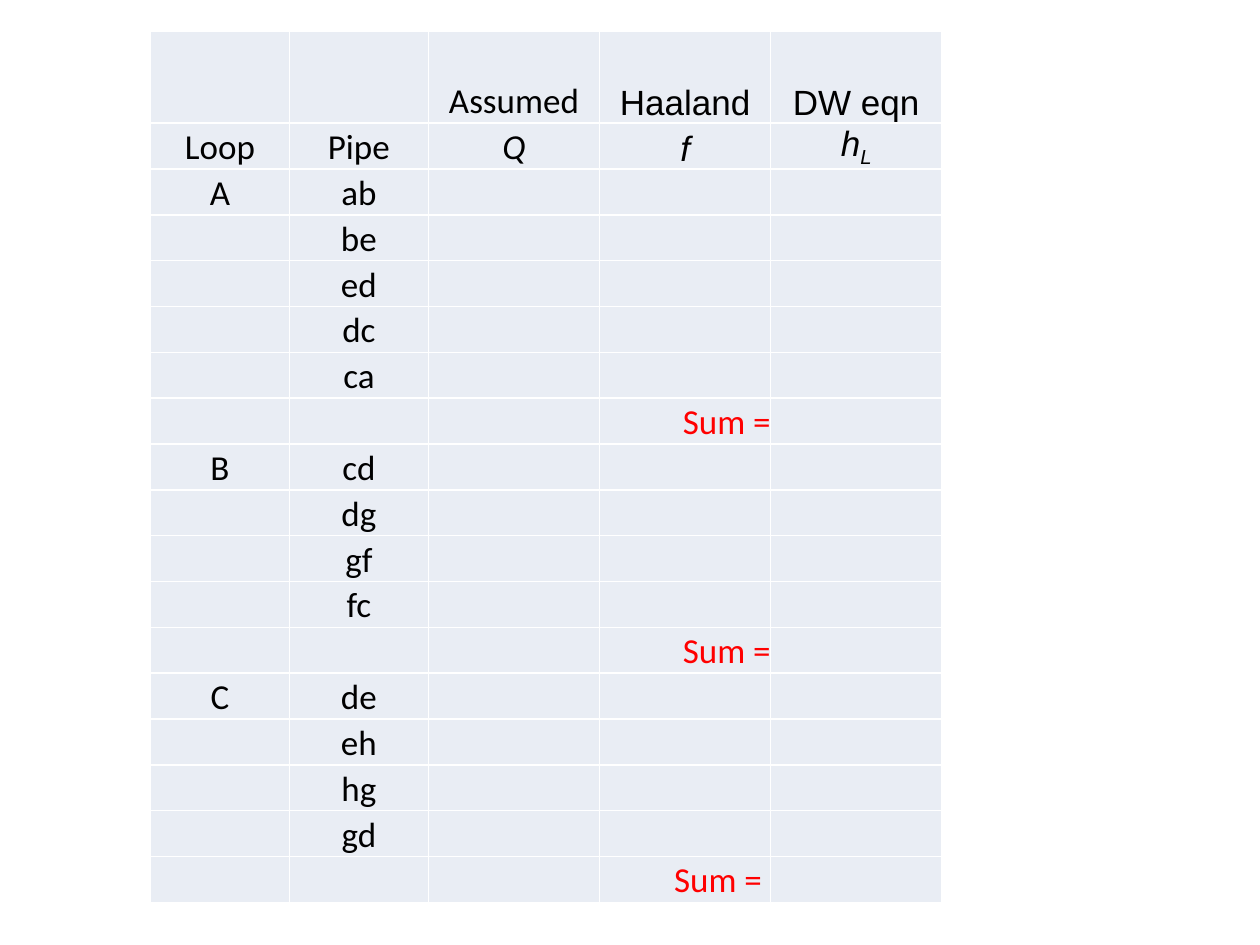
import lxml.etree
import pptx
import pptx.dml.color
import pptx.enum.text
import pptx.oxml.ns
import pptx.util

Pt = pptx.util.Pt
ALIGN = pptx.enum.text.PP_ALIGN
BOTTOM = pptx.enum.text.MSO_ANCHOR.BOTTOM


def color(hex_text):
    return pptx.dml.color.RGBColor.from_string(hex_text)


class Sheet:
    """Style of the slide, and the page being filled."""

    text_font, symbol_font = "Calibri", "Arial"
    size = 20
    ink, sum_ink, cell_fill, rule = "000000", "FF0000", "E9EDF4", "FFFFFF"
    side_margin = 5

    def __init__(self, deck):
        self.page = deck.slides.add_slide(deck.slide_layouts[6])

    def table(self, left, top, widths, heights):
        frame = self.page.shapes.add_table(
            len(heights), len(widths), Pt(left), Pt(top), Pt(sum(widths)), Pt(sum(heights)))
        table = frame.table
        table.first_row = table.horz_banding = False
        for column, width in zip(table.columns, widths):
            column.width = Pt(width)
        for row, height in zip(table.rows, heights):
            row.height = Pt(height)
        for cell in table.iter_cells():
            cell.fill.solid()
            cell.fill.fore_color.rgb = color(self.cell_fill)
            cell.margin_top = cell.margin_bottom = 0
            self.borders(cell)
        return table

    def borders(self, cell):
        properties = cell._tc.get_or_add_tcPr()
        name = pptx.oxml.ns.qn
        for position, side in enumerate(("a:lnL", "a:lnR", "a:lnT", "a:lnB")):
            line = lxml.etree.Element(name(side), w=str(Pt(1)))
            fill = lxml.etree.SubElement(line, name("a:solidFill"))
            lxml.etree.SubElement(fill, name("a:srgbClr"), val=self.rule)
            properties.insert(position, line)

    def text(self, cell, words, font=text_font, ink=ink, italic=False,
             align=ALIGN.CENTER, margin=side_margin, subscript=""):
        cell.vertical_anchor = BOTTOM
        cell.margin_left = cell.margin_right = Pt(margin)
        para = cell.text_frame.paragraphs[0]
        para.alignment = align
        para.font.name, para.font.size = font, Pt(self.size)
        para.font.italic = italic
        para.font.color.rgb = color(ink)
        para.add_run().text = words
        if subscript:
            span = para.add_run()
            span.text = subscript
            span._r.get_or_add_rPr().set("baseline", "-25000")


def main():
    deck = pptx.Presentation()
    deck.slide_width, deck.slide_height = Pt(720), Pt(540)
    sheet = Sheet(deck)

    # Loops, each with its pipes and a closing sum row
    loops = {
        "A": ["ab", "be", "ed", "dc", "ca"],
        "B": ["cd", "dg", "gf", "fc"],
        "C": ["de", "eh", "hg", "gd"],
    }
    body_rows = sum(len(pipes) + 1 for pipes in loops.values())
    table = sheet.table(86, 18, [79.4] * 2 + [97.8] * 3, [52.4] + [26.2] * (body_rows + 1))

    # Two heading rows
    arial = sheet.symbol_font
    sheet.text(table.cell(0, 2), "Assumed")
    sheet.text(table.cell(0, 3), "Haaland", arial)
    sheet.text(table.cell(0, 4), "DW eqn", arial)
    sheet.text(table.cell(1, 0), "Loop")
    sheet.text(table.cell(1, 1), "Pipe")
    sheet.text(table.cell(1, 2), "Q", italic=True)
    sheet.text(table.cell(1, 3), "f", arial, italic=True)
    sheet.text(table.cell(1, 4), "h", arial, italic=True, subscript="L")

    # Body rows; only the last sum keeps its side margin
    row = 2
    for loop, pipes in loops.items():
        sheet.text(table.cell(row, 0), loop)
        for pipe in pipes:
            sheet.text(table.cell(row, 1), pipe)
            row += 1
        margin = sheet.side_margin if loop == "C" else 0
        sheet.text(table.cell(row, 3), "Sum =", ink=sheet.sum_ink,
                   align=ALIGN.RIGHT, margin=margin)
        row += 1

    deck.save("out.pptx")


if __name__ == "__main__":
    main()
